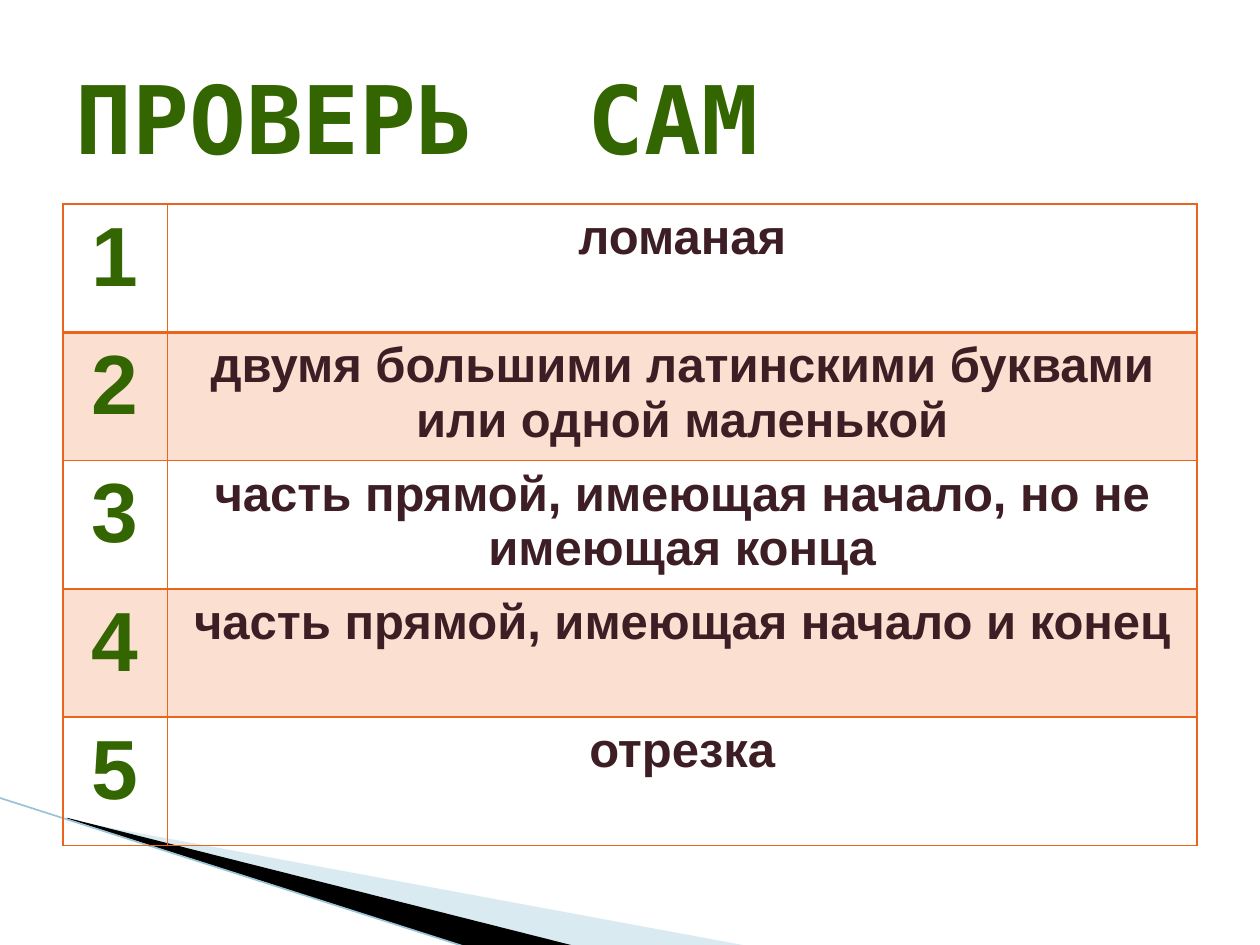
"""Build the self-check slide with its answer table."""
from lxml import etree
from pptx import Presentation
from pptx.dml.color import RGBColor
from pptx.enum.shapes import MSO_CONNECTOR as CONN
from pptx.enum.text import MSO_ANCHOR as ANCHOR, PP_ALIGN as ALIGN
from pptx.oxml import parse_xml
from pptx.oxml.ns import nsdecls, qn
from pptx.util import Inches, Pt

GREEN = RGBColor(0x33, 0x66, 0x00)
PLUM = RGBColor(0x3E, 0x1E, 0x25)
ORANGE = RGBColor(0xEB, 0x64, 0x1B)
PALE_BLUE = RGBColor(0xA0, 0xCB, 0xDC)
LINE_BLUE = RGBColor(0x97, 0xC5, 0xD8)
BLACK = RGBColor(0x00, 0x00, 0x00)


def write(tf, text, size, color, font="Arial", align=ALIGN.CENTER):
    p = tf.paragraphs[0]
    p.alignment = align
    r = p.add_run()
    r.text = text
    r.font.name, r.font.size, r.font.bold = font, Pt(size), True
    r.font.color.rgb = color


def set_alpha(element, percent):
    color = element.find(".//" + qn("a:srgbClr"))
    etree.SubElement(color, qn("a:alpha")).set("val", str(percent * 1000))


prs = Presentation()
prs.slide_width, prs.slide_height = Inches(10), Inches(7.5)
s = prs.slides.add_slide(prs.slide_layouts[6])

wedges = [
    ([(0.55, 6.51), (5.95, 7.51), (4.56, 7.51), (0.55, 6.5)], PALE_BLUE, 40),
    ([(0.53, 6.49), (4.57, 7.51), (3.72, 7.52), (0.54, 6.5)], BLACK, 100),
]
for points, color, alpha in wedges:
    start, *rest = [(Inches(x), Inches(y)) for x, y in points]
    builder = s.shapes.build_freeform(*start)
    builder.add_line_segments(rest, close=True)
    sp = builder.convert_to_shape()
    sp.shadow.inherit = False
    sp.fill.solid()
    sp.fill.fore_color.rgb = color
    sp.line.fill.background()
    if alpha < 100:
        set_alpha(sp.fill._xPr, alpha)

edge = s.shapes.add_connector(CONN.STRAIGHT, Inches(-0.01), Inches(6.33), Inches(3.71), Inches(7.52))
edge.line.color.rgb = LINE_BLUE
edge.line.width = Pt(0.95)
etree.SubElement(edge._element.spPr, qn("a:effectLst"))

answers = [
    "ломаная",
    "двумя большими латинскими буквами или одной маленькой",
    "часть прямой, имеющая начало, но не имеющая конца",
    "часть прямой, имеющая начало и конец",
    "отрезка",
]
table = s.shapes.add_table(len(answers), 2, Inches(0.5), Inches(1.62), Inches(9), Inches(5.09)).table
table.first_row = table.horz_banding = False
table.columns[0].width, table.columns[1].width = Inches(0.83), Inches(8.17)

for i, answer in enumerate(answers):
    for j, (text, size, color) in enumerate([(str(i + 1), 48, GREEN), (answer, 28, PLUM)]):
        cell = table.cell(i, j)
        write(cell.text_frame, text, size, color)
        tcPr = cell._tc.get_or_add_tcPr()
        if i % 2:
            cell.fill.solid()
            cell.fill.fore_color.rgb = ORANGE
            set_alpha(tcPr, 20)
        else:
            cell.fill.background()
        for k, side in enumerate("LRTB"):
            heavy = (i, side) in [(0, "B"), (1, "T")]
            tcPr.insert(k, parse_xml(
                f'<a:ln{side} {nsdecls("a")} w="{Pt(2 if heavy else 1)}"><a:solidFill>'
                f'<a:srgbClr val="{ORANGE}"/></a:solidFill></a:ln{side}>'))

title = s.shapes.add_textbox(Inches(0.5), Inches(0.3), Inches(9), Inches(1.25))
tf = title.text_frame
tf.word_wrap = True
tf.vertical_anchor = ANCHOR.MIDDLE
write(tf, "ПРОВЕРЬ  САМ", 54, GREEN, font="DejaVu Sans Mono", align=ALIGN.LEFT)

prs.save("out.pptx")
